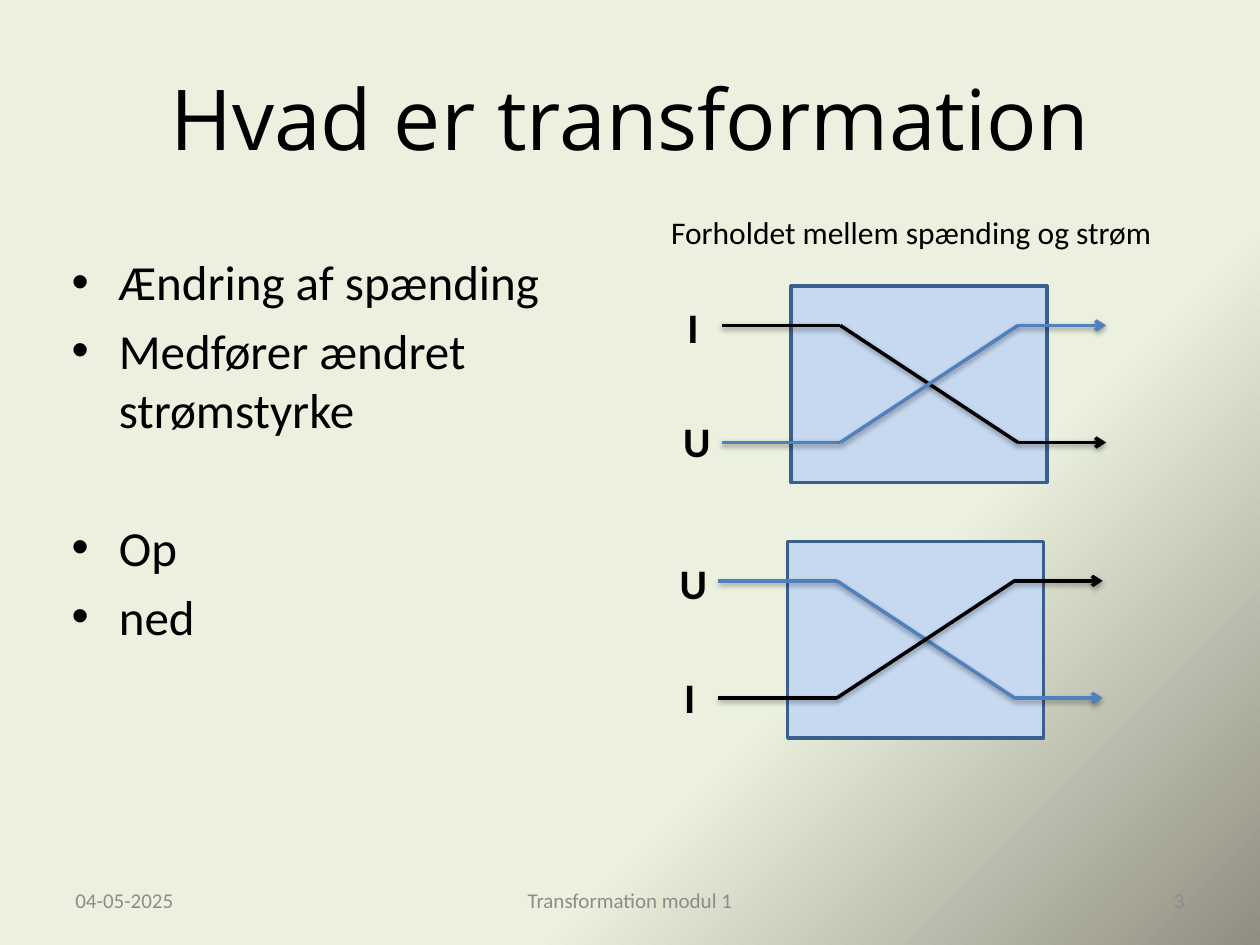
from lxml.etree import SubElement
from pptx import Presentation
from pptx.dml.color import RGBColor
from pptx.enum.shapes import MSO_CONNECTOR as Conn, MSO_SHAPE as Shape
from pptx.enum.text import MSO_ANCHOR as Anchor, MSO_AUTO_SIZE as Fit, PP_ALIGN as Align
from pptx.oxml.ns import qn
from pptx.util import Cm, Pt

BLACK, BLUE, GREY = "000000", "4F81BD", "8C8C8C"
BOX_SIZE = (5.16, 3.96)
LINE_XS = (-1.4, 0.99, 4.57, 6.35)
HIGH, LOW = 0.79, 3.15
LABELS = {"I": (-2.34, 0.74), "U": (-2.43, 1.07)}
LINE_COLOURS = {"I": BLACK, "U": BLUE}


def colour(value):
    return RGBColor.from_string(value)


def cm(*values):
    return [Cm(v) for v in values]


def set_attrs(obj, values):
    for name, value in values.items():
        setattr(obj, name, value)


def place(shape, *box):
    set_attrs(shape, dict(zip(("left", "top", "width", "height"), cm(*box))))


def format_font(font, size, name="Calibri", rgb=BLACK, bold=False):
    set_attrs(font, {"size": Pt(size), "name": name, "bold": bold})
    font.color.rgb = colour(rgb)


def add_background(s):
    fill = s.background.fill
    fill.gradient()
    fill.gradient_angle = 315
    for stop, position, rgb in zip(fill.gradient_stops, (0.67, 1), ("EBF1DE", "918E81")):
        stop.position = position
        stop.color.rgb = colour(rgb)


def add_title(s, text):
    title = s.shapes.title
    place(title, 1.27, 0.76, 22.86, 3.18)
    tf = title.text_frame
    tf.text = text
    tf.vertical_anchor = Anchor.MIDDLE
    p = tf.paragraphs[0]
    p.alignment = Align.CENTER
    format_font(p.runs[0].font, 48, "Open Sans")


def add_list(s, items):
    body = s.placeholders[1]
    place(body, 1.19, 4.95, 12.29, 12.5)
    tf = body.text_frame
    tf.text = "\n".join(text for text, _ in items)
    for p, (_, gap) in zip(tf.paragraphs, items):
        p.space_before = Pt(gap)
        format_font(p.runs[0].font, 28)


def add_text(shapes, text, box, size, rgb=BLACK, bold=False, align=Align.LEFT, **frame):
    sp = shapes.add_textbox(*cm(*box))
    tf = sp.text_frame
    set_attrs(tf, {"word_wrap": True, **frame})
    p = tf.paragraphs[0]
    p.alignment = align
    r = p.add_run()
    r.text = text
    format_font(r.font, size, rgb=rgb, bold=bold)


def add_line(shapes, start, end, rgb, arrow=False):
    line = shapes.add_connector(Conn.STRAIGHT, *cm(*start, *end))
    line.line.width = Pt(2)
    line.line.color.rgb = colour(rgb)
    if arrow:
        SubElement(line.line._get_or_add_ln(), qn("a:tailEnd"), type="arrow")
    effects = SubElement(line._element.spPr, qn("a:effectLst"))
    shadow = SubElement(effects, qn("a:outerShdw"), blurRad="40000", dist="20000",
                        dir="5400000", rotWithShape="0")
    shade = SubElement(shadow, qn("a:srgbClr"), val=BLACK)
    SubElement(shade, qn("a:alpha"), val="38000")


def add_diagram(s, left, top, labels):
    shapes = s.shapes.add_group_shape().shapes
    box = shapes.add_shape(Shape.RECTANGLE, *cm(left, top, *BOX_SIZE))
    box.shadow.inherit = False
    box.fill.solid()
    box.fill.fore_color.rgb = colour("C6D9F1")
    box.line.color.rgb = colour("3A5F8C")
    box.line.width = Pt(2)
    for label, start, end in zip(labels, (HIGH, LOW), (LOW, HIGH)):
        points = [(left + x, top + y) for x, y in zip(LINE_XS, (start, start, end, end))]
        for i, (a, b) in enumerate(zip(points, points[1:])):
            add_line(shapes, a, b, LINE_COLOURS[label], arrow=i == 2)
    for label, y in zip(labels, (0.19, 2.49)):
        x, width = LABELS[label]
        add_text(shapes, label, (left + x, top + y, width, 1.27), 24, bold=True,
                 word_wrap=False, auto_size=Fit.SHAPE_TO_FIT_TEXT)


def add_footer(s):
    for text, left, width, align in (
        ("04-05-2025", 1.27, 5.93, Align.LEFT),
        ("Transformation modul 1", 8.68, 8.04, Align.CENTER),
        ("3", 18.2, 5.93, Align.RIGHT),
    ):
        add_text(s.shapes, text, (left, 17.65, width, 1.01), 12, GREY, align=align,
                 vertical_anchor=Anchor.MIDDLE)


def main():
    prs = Presentation()
    set_attrs(prs, {"slide_width": Cm(25.4), "slide_height": Cm(19.05)})
    s = prs.slides.add_slide(prs.slide_layouts[1])
    add_background(s)
    add_title(s, "Hvad er transformation")
    add_list(s, [("Ændring af spænding", 0), ("Medfører ændret strømstyrke", 5.6),
                 ("Op", 45.4), ("ned", 5.6)])
    add_diagram(s, 15.88, 10.92, "UI")
    add_diagram(s, 15.95, 5.77, "IU")
    add_text(s.shapes, "Forholdet mellem spænding og strøm", (13.28, 4.17, 10.31, 1.8), 18,
             word_wrap=False)
    add_footer(s)
    prs.save("out.pptx")


if __name__ == "__main__":
    main()
